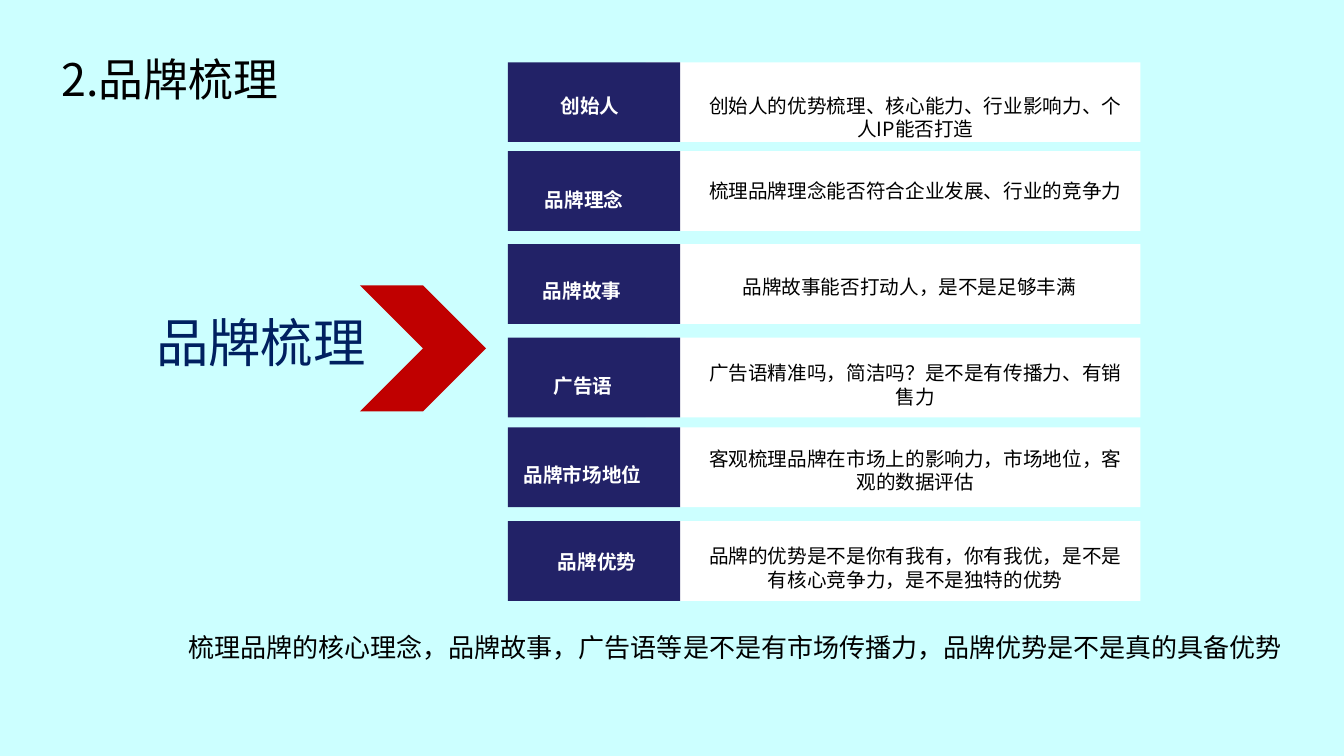
from pptx import Presentation
from pptx.dml.color import RGBColor
from pptx.enum import shapes, text
from pptx import util as u

NAVY = RGBColor(0x22, 0x22, 0x67)
DEEP_BLUE = RGBColor(0x00, 0x20, 0x60)
RED = RGBColor(0xC0, 0x00, 0x00)
WHITE = RGBColor(0xFF, 0xFF, 0xFF)
BLACK = RGBColor(0x00, 0x00, 0x00)
PALE_CYAN = RGBColor(0xCC, 0xFF, 0xFF)
FONT = "Noto Sans CJK SC"

TITLE = "2.品牌梳理"
TOPIC = "品牌梳理"
SUMMARY = "梳理品牌的核心理念，品牌故事，广告语等是不是有市场传播力，品牌优势是不是真的具备优势"
# label, question, row top, label centre, label top, question left, question top
ASPECTS = [
    ("创始人", "创始人的优势梳理、核心能力、行业影响力、个人IP能否打造", 1.57, 14.87, 2.24, 17.42, 2.24),
    ("品牌理念", "梳理品牌理念能否符合企业发展、行业的竞争力", 3.81, 14.72, 4.62, 17.42, 4.39),
    ("品牌故事", "品牌故事能否打动人，是不是足够丰满", 6.15, 14.67, 6.91, 17.27, 6.81),
    ("广告语", "广告语精准吗，简洁吗？是不是有传播力、有销售力", 8.51, 14.69, 9.3, 17.42, 8.97),
    ("品牌市场地位", "客观梳理品牌在市场上的影响力，市场地位，客观的数据评估", 10.77, 14.68, 11.53, 17.42, 11.13),
    ("品牌优势", "品牌的优势是不是你有我有，你有我优，是不是有核心竞争力，是不是独特的优势", 13.13, 15.05, 13.74, 17.42, 13.59),
]
LABEL_LEFT, LABEL_WIDTH = 12.8, 4.34
BAR_LEFT, BAR_WIDTH = 16.27, 12.47
ROW_HEIGHT = 2.01
QUESTION_WIDTH = 11.3

deck = Presentation()
deck.slide_width, deck.slide_height = u.Cm(33.87), u.Cm(19.05)
slide = deck.slides.add_slide(deck.slide_layouts[6])
slide.background.fill.solid()
slide.background.fill.fore_color.rgb = PALE_CYAN


def add_block(kind, left, top, width, height, color):
    block = slide.shapes.add_shape(kind, u.Cm(left), u.Cm(top), u.Cm(width), u.Cm(height))
    block.shadow.inherit = False
    block.fill.solid()
    block.fill.fore_color.rgb = color
    block.line.fill.background()


def add_text(words, left, top, width, height, size=14, color=BLACK, bold=False, wrap=True,
             align=text.PP_ALIGN.CENTER, anchor=text.MSO_ANCHOR.TOP):
    frame = slide.shapes.add_textbox(u.Cm(left), u.Cm(top), u.Cm(width), u.Cm(height)).text_frame
    frame.word_wrap = wrap
    frame.vertical_anchor = anchor
    paragraph = frame.paragraphs[0]
    paragraph.alignment = align
    run = paragraph.add_run()
    run.text = words
    run.font.size = u.Pt(size)
    run.font.bold = bold
    run.font.color.rgb = color
    run.font.name = FONT
    properties = run.font._element
    east_asian = properties.makeelement(
        "{http://schemas.openxmlformats.org/drawingml/2006/main}ea", {"typeface": FONT})
    properties.append(east_asian)


for label, question, row_top, label_centre, label_top, question_left, question_top in ASPECTS:
    add_block(shapes.MSO_SHAPE.RECTANGLE, BAR_LEFT, row_top, BAR_WIDTH, ROW_HEIGHT, WHITE)
    add_block(shapes.MSO_SHAPE.RECTANGLE, LABEL_LEFT, row_top, LABEL_WIDTH, ROW_HEIGHT, NAVY)
    label_width = 0.5 * len(label) + 0.5
    add_text(label, label_centre - label_width / 2, label_top, label_width, 0.86,
             color=WHITE, bold=True, wrap=False)
    add_text(question, question_left, question_top, QUESTION_WIDTH, 0.86)

add_text(TOPIC, 3.66, 7.7, 5.84, 1.85, size=37.4, color=DEEP_BLUE, wrap=False)
add_block(shapes.MSO_SHAPE.CHEVRON, 9.07, 7.19, 3.18, 3.18, RED)
add_text(SUMMARY, 4.5, 15.8, 29.08, 1.07, size=18.6, wrap=False, align=text.PP_ALIGN.LEFT)
add_text(TITLE, 1.3, 0.64, 28.02, 2.69, size=32, align=text.PP_ALIGN.LEFT,
         anchor=text.MSO_ANCHOR.MIDDLE)

deck.save("out.pptx")
